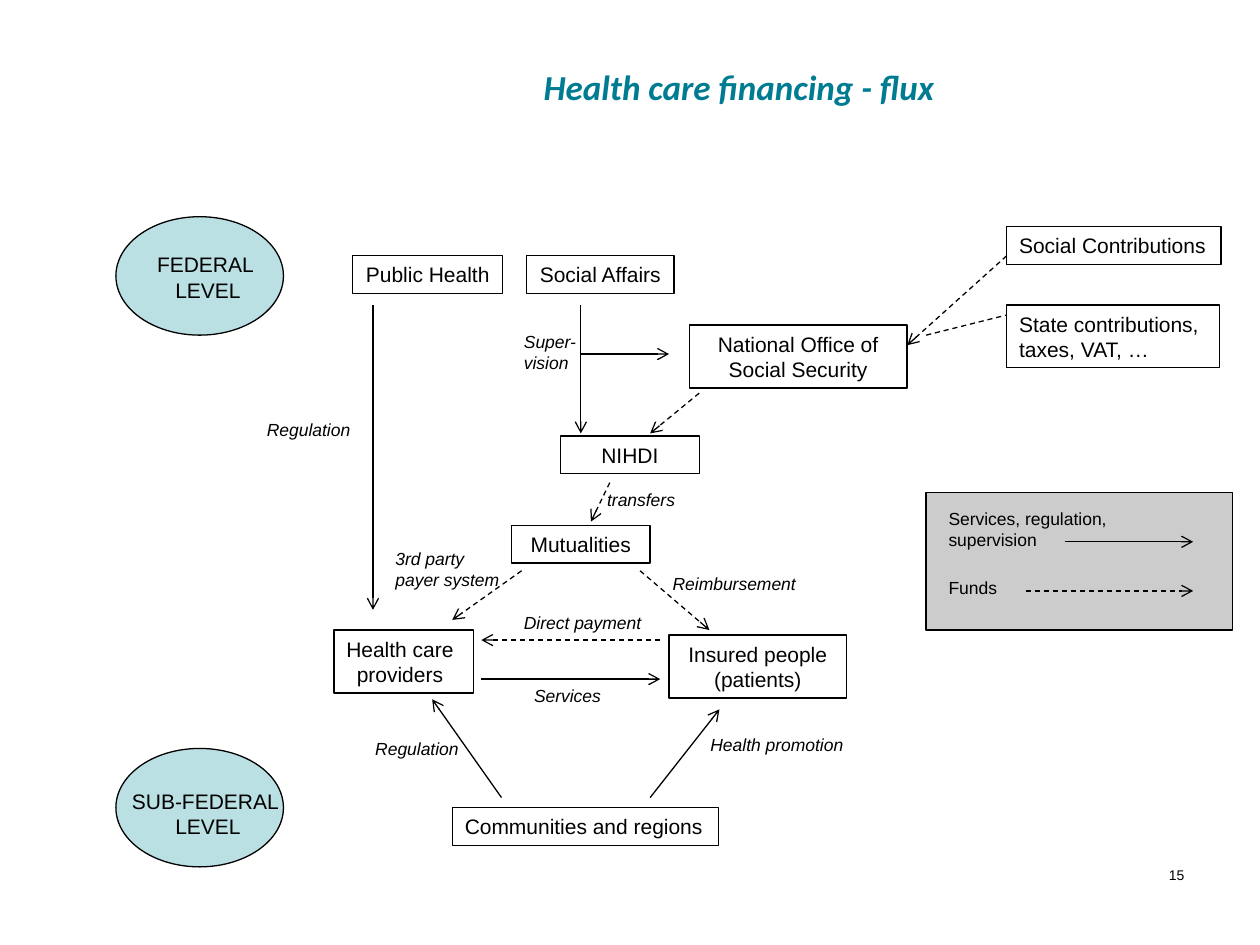
import pptx
import pptx.dml.color
import pptx.enum.dml
import pptx.enum.shapes
import pptx.enum.text
import pptx.oxml
import pptx.oxml.ns
import pptx.util
from pptx.util import Inches

COLORS = {
    "text": "000000",
    "line": "000000",
    "title": "007C92",
    "level": "BBE0E3",
    "legend": "CCCCCC",
}
ALIGN = pptx.enum.text.PP_ALIGN
SHAPES = pptx.enum.shapes.MSO_SHAPE
NODES = [
    ("Public Health", 2.8, 2.03, 1.19, 0.3, ALIGN.CENTER, False),
    ("Social Affairs", 4.18, 2.03, 1.17, 0.3, ALIGN.CENTER, False),
    ("NIHDI", 4.45, 3.46, 1.1, 0.3, ALIGN.CENTER, True),
    ("National Office of Social Security", 5.47, 2.58, 1.73, 0.5, ALIGN.CENTER, True),
    ("Mutualities", 4.06, 4.17, 1.1, 0.3, ALIGN.CENTER, True),
    ("Insured people (patients)", 5.31, 5.04, 1.41, 0.5, ALIGN.CENTER, True),
    ("Communities and regions", 3.59, 6.41, 2.11, 0.3, ALIGN.LEFT, False),
    ("Social Contributions", 7.99, 1.8, 1.7, 0.3, ALIGN.LEFT, False),
    ("State contributions,\ntaxes, VAT, …", 7.99, 2.42, 1.69, 0.5, ALIGN.LEFT, False),
]
FLOW_LABELS = [
    ("Regulation", 2.02, 3.28, 0.87, 0.27),
    ("Super-\nvision", 4.06, 2.58, 0.62, 0.44),
    ("Regulation", 2.88, 5.81, 0.87, 0.27),
    ("Health promotion", 5.54, 5.78, 1.27, 0.27),
    ("Services", 4.14, 5.39, 0.74, 0.27),
    ("Direct payment", 4.06, 4.81, 1.15, 0.27),
    ("Reimbursement", 5.24, 4.5, 1.19, 0.27),
    ("3rd party\npayer system", 3.04, 4.3, 1.04, 0.44),
    ("transfers", 4.72, 3.83, 0.75, 0.27),
]
SERVICE_FLOWS = [
    (2.96, 2.42, 2.96, 4.84),
    (4.61, 2.42, 4.61, 3.44),
    (4.61, 2.81, 5.31, 2.81),
    (3.98, 6.33, 3.43, 5.55),
    (5.16, 6.33, 5.71, 5.63),
    (3.82, 5.39, 5.24, 5.39),
    (8.45, 4.3, 9.47, 4.3),
]
FUND_FLOWS = [
    (5.24, 5.08, 3.82, 5.08),
    (5.55, 3.12, 5.16, 3.44),
    (4.84, 3.83, 4.69, 4.14),
    (4.14, 4.53, 3.59, 4.92),
    (5.08, 4.53, 5.63, 5),
    (7.99, 2.03, 7.2, 2.74),
    (8.14, 4.69, 9.47, 4.69),
]


def rgb(name):
    return pptx.dml.color.RGBColor.from_string(COLORS[name])


def write_text(shape, text, size=12, font="Arial", color="text", bold=False,
               italic=False, align=ALIGN.LEFT, wrap=False, grow=True,
               anchor=pptx.enum.text.MSO_ANCHOR.TOP):
    frame = shape.text_frame
    frame.text = text
    frame.word_wrap = wrap
    frame.vertical_anchor = anchor
    sizes = pptx.enum.text.MSO_AUTO_SIZE
    frame.auto_size = sizes.SHAPE_TO_FIT_TEXT if grow else sizes.NONE
    for paragraph in frame.paragraphs:
        paragraph.alignment = align
        for run in paragraph.runs:
            run.font.size = pptx.util.Pt(size)
            run.font.name = font
            run.font.bold = bold
            run.font.italic = italic
            run.font.color.rgb = rgb(color)


def add_label(slide, text, left, top, width, height, **text_format):
    box = slide.shapes.add_textbox(Inches(left), Inches(top), Inches(width), Inches(height))
    write_text(box, text, **text_format)


def add_outlined(slide, kind, left, top, width, height, fill=None):
    shape = slide.shapes.add_shape(kind, Inches(left), Inches(top), Inches(width), Inches(height))
    shape.shadow.inherit = False
    if fill:
        shape.fill.solid()
        shape.fill.fore_color.rgb = rgb(fill)
    else:
        shape.fill.background()
    shape.line.color.rgb = rgb("line")
    shape.line.width = pptx.util.Pt(0.75)
    return shape


def add_node(slide, text, left, top, width, height, align, wrap):
    shape = add_outlined(slide, SHAPES.RECTANGLE, left, top, width, height)
    write_text(shape, text, align=align, wrap=wrap)
    return shape


def add_flow(slide, start_x, start_y, end_x, end_y, dashed=False, arrow=True):
    connector = slide.shapes.add_connector(
        pptx.enum.shapes.MSO_CONNECTOR.STRAIGHT,
        Inches(start_x), Inches(start_y), Inches(end_x), Inches(end_y))
    connector.line.color.rgb = rgb("line")
    connector.line.width = pptx.util.Pt(0.75)
    if dashed:
        connector.line.dash_style = pptx.enum.dml.MSO_LINE.DASH
    properties = connector._element.spPr
    if arrow:
        tail = pptx.oxml.parse_xml(
            f'<a:tailEnd {pptx.oxml.ns.nsdecls("a")} type="arrow"/>')
        properties.find(pptx.oxml.ns.qn("a:ln")).append(tail)
    properties.append(pptx.oxml.parse_xml(f'<a:effectLst {pptx.oxml.ns.nsdecls("a")}/>'))


def add_title(slide, text):
    title = slide.shapes.title
    title.left, title.top = Inches(1.85), Inches(0.04)
    title.width, title.height = Inches(8.15), Inches(1.29)
    write_text(title, text, size=20, font="Calibri", color="title", bold=True,
               italic=True, align=ALIGN.CENTER, wrap=True, grow=False,
               anchor=pptx.enum.text.MSO_ANCHOR.MIDDLE)
    title.text_frame.margin_right = Inches(0.22)


def main():
    presentation = pptx.Presentation()
    presentation.slide_width, presentation.slide_height = Inches(10), Inches(7.5)
    slide = presentation.slides.add_slide(presentation.slide_layouts[5])
    add_title(slide, "Health care financing - flux")

    add_outlined(slide, SHAPES.RECTANGLE, 7.35, 3.91, 2.43, 1.09, fill="legend")
    for top in (1.72, 5.94):
        add_outlined(slide, SHAPES.OVAL, 0.92, top, 1.33, 0.94, fill="level")
    add_label(slide, "FEDERAL \nLEVEL", 1.14, 1.95, 1.02, 0.5, align=ALIGN.CENTER)
    add_label(slide, "SUB-FEDERAL \nLEVEL", 0.94, 6.21, 1.42, 0.5, align=ALIGN.CENTER)

    for node in NODES:
        add_node(slide, *node)
    providers = add_node(slide, "Health care\nproviders", 2.65, 5, 1.11, 0.5, ALIGN.CENTER, False)
    providers.text_frame.paragraphs[0].alignment = ALIGN.LEFT

    for flow in SERVICE_FLOWS:
        add_flow(slide, *flow)
    for flow in FUND_FLOWS:
        add_flow(slide, *flow, dashed=True)
    add_flow(slide, 7.35, 2.66, 7.99, 2.5, dashed=True, arrow=False)

    for label in FLOW_LABELS:
        add_label(slide, *label, size=10, italic=True)
    add_label(slide, "Services, regulation, supervision", 7.43, 3.98, 2.14, 0.44, size=10, wrap=True)
    add_label(slide, "Funds", 7.43, 4.53, 0.59, 0.27, size=10)
    add_label(slide, "15", 7.17, 6.83, 2.33, 0.52, size=8, align=ALIGN.RIGHT, wrap=True, grow=False)
    presentation.save("out.pptx")


if __name__ == "__main__":
    main()
